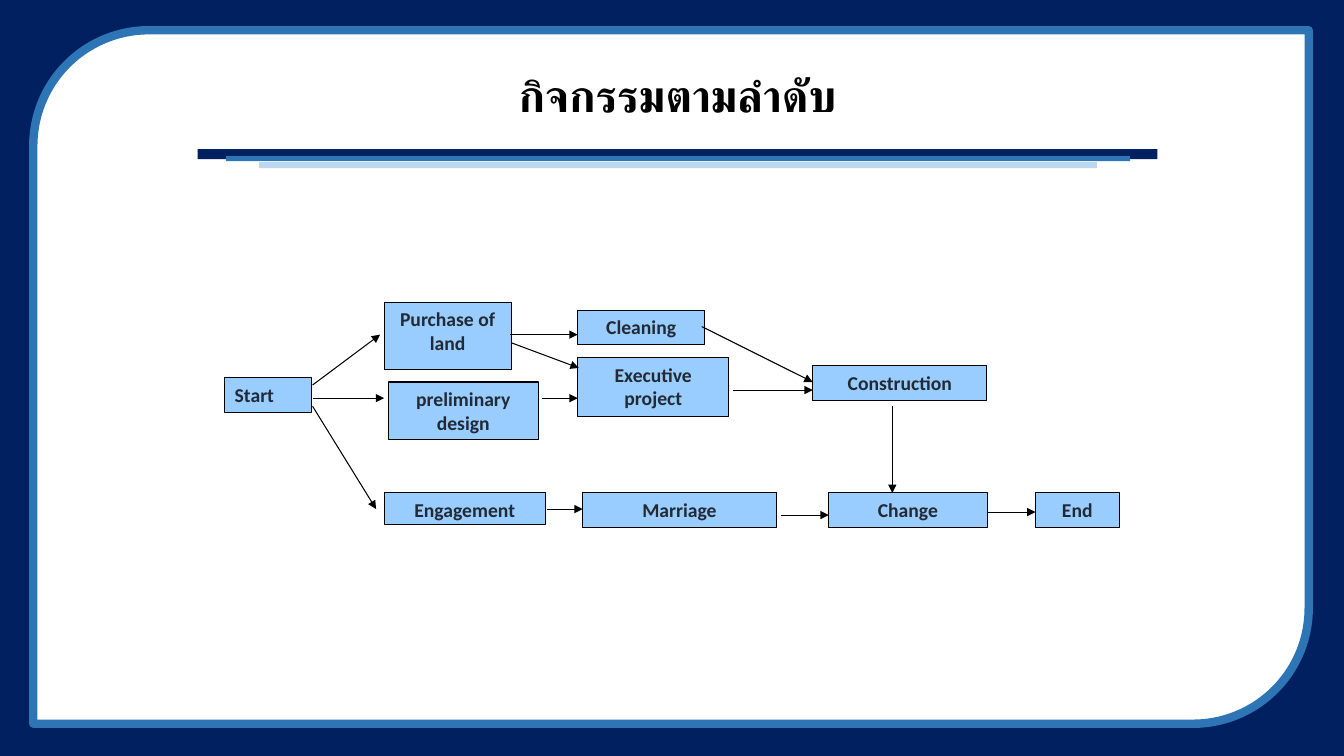
from pptx import Presentation
from pptx.dml.color import RGBColor
from pptx.enum import shapes, text
from pptx.oxml import parse_xml
from pptx.oxml.ns import nsdecls
from pptx.util import Inches, Pt

COLORS = {"navy": "002060", "blue": "2E75B6", "pale": "BDD7EE", "white": "FFFFFF",
          "box": "99CCFF", "ink": "222A35", "black": "000000"}
TITLE = "กิจกรรมตามลำดับ"
TITLE_BOX = (1.96, 0.49, 9.52, 0.97)
FRAME = (0.33, 0.3, 12.65, 6.88)
RULES = [
    ("navy", 1.96, 1.48, 9.52, 0.1),
    ("blue", 2.24, 1.55, 8.97, 0.05),
    ("pale", 2.57, 1.61, 8.31, 0.06),
]
ACTIVITIES = [
    ("Start", 2.23, 3.75, 0.86, 0.34),
    ("Purchase of land", 3.81, 3, 1.26, 0.67),
    ("preliminary design", 3.85, 3.79, 1.49, 0.57),
    ("Engagement", 3.81, 4.89, 1.6, 0.31),
    ("Cleaning", 5.73, 3.08, 1.26, 0.34),
    ("Executive project", 5.73, 3.55, 1.5, 0.58),
    ("Marriage", 5.78, 4.89, 1.92, 0.34),
    ("Construction", 8.06, 3.63, 1.73, 0.34),
    ("Change", 8.22, 4.89, 1.57, 0.34),
    ("End", 10.27, 4.89, 0.83, 0.34),
]
ARROWS = [
    (3.1, 3.82, 3.77, 3.32),
    (3.1, 3.95, 3.81, 3.95),
    (3.1, 4.03, 3.73, 5.05),
    (5.06, 3.32, 5.73, 3.32),
    (5.07, 3.4, 5.74, 3.65),
    (5.38, 3.95, 5.73, 3.95),
    (5.43, 5.05, 5.78, 5.05),
    (6.96, 3.24, 8.06, 3.79),
    (7.27, 3.87, 8.06, 3.87),
    (7.75, 5.11, 8.22, 5.11),
    (8.85, 4.03, 8.85, 4.89),
    (9.79, 5.08, 10.27, 5.08),
]


def rgb(name):
    return RGBColor.from_string(COLORS[name])


def set_line(line, color, width):
    line.color.rgb = rgb(color)
    line.width = Pt(width)


def add_block(s, box, fill, kind=shapes.MSO_SHAPE.RECTANGLE, line=None):
    sp = s.shapes.add_shape(kind, *map(Inches, box))
    sp.shadow.inherit = False
    sp.fill.solid()
    sp.fill.fore_color.rgb = rgb(fill)
    if line:
        set_line(sp.line, *line)
    else:
        sp.line.fill.background()
    return sp


def set_text(sp, content, font, size, color, anchor, align):
    tf = sp.text_frame
    tf.word_wrap = True
    tf.auto_size = text.MSO_AUTO_SIZE.NONE
    tf.vertical_anchor = anchor
    tf.text = content
    p = tf.paragraphs[0]
    p.alignment = align
    f = p.runs[0].font
    f.name, f.size, f.bold = font, Pt(size), True
    f.color.rgb = rgb(color)
    return p


def add_title(s):
    title = s.shapes.title
    title.left, title.top, title.width, title.height = map(Inches, TITLE_BOX)
    p = set_text(title, TITLE, "Arial", 32, "black",
                 text.MSO_ANCHOR.MIDDLE, text.PP_ALIGN.CENTER)
    p.line_spacing = 0.9
    rPr = p.runs[0].font._element
    rPr.set("lang", "th-TH")
    rPr.append(parse_xml(f'<a:cs {nsdecls("a")} typeface="Arial"/>'))
    s.shapes._spTree.append(title._element)


def add_arrow(s, ends):
    c = s.shapes.add_connector(shapes.MSO_CONNECTOR.STRAIGHT, *map(Inches, ends))
    set_line(c.line, "black", 0.75)
    c.line._get_or_add_ln().append(
        parse_xml(f'<a:tailEnd {nsdecls("a")} type="triangle"/>'))
    c._element.spPr.append(parse_xml(f'<a:effectLst {nsdecls("a")}/>'))


def main():
    prs = Presentation()
    prs.slide_width, prs.slide_height = Inches(13.33), Inches(7.5)
    s = prs.slides.add_slide(prs.slide_layouts[5])
    s.background.fill.solid()
    s.background.fill.fore_color.rgb = rgb("navy")

    add_block(s, FRAME, "white", shapes.MSO_SHAPE.ROUND_2_DIAG_RECTANGLE, ("blue", 6))
    for color, *box in RULES:
        add_block(s, box, color)
    add_title(s)

    for name, *box in ACTIVITIES:
        sp = add_block(s, box, "box", line=("black", 0.75))
        align = text.PP_ALIGN.LEFT if name == "Start" else text.PP_ALIGN.CENTER
        set_text(sp, name, "Calibri", 14, "ink", text.MSO_ANCHOR.TOP, align)
    for ends in ARROWS:
        add_arrow(s, ends)
    prs.save("out.pptx")


if __name__ == "__main__":
    main()
